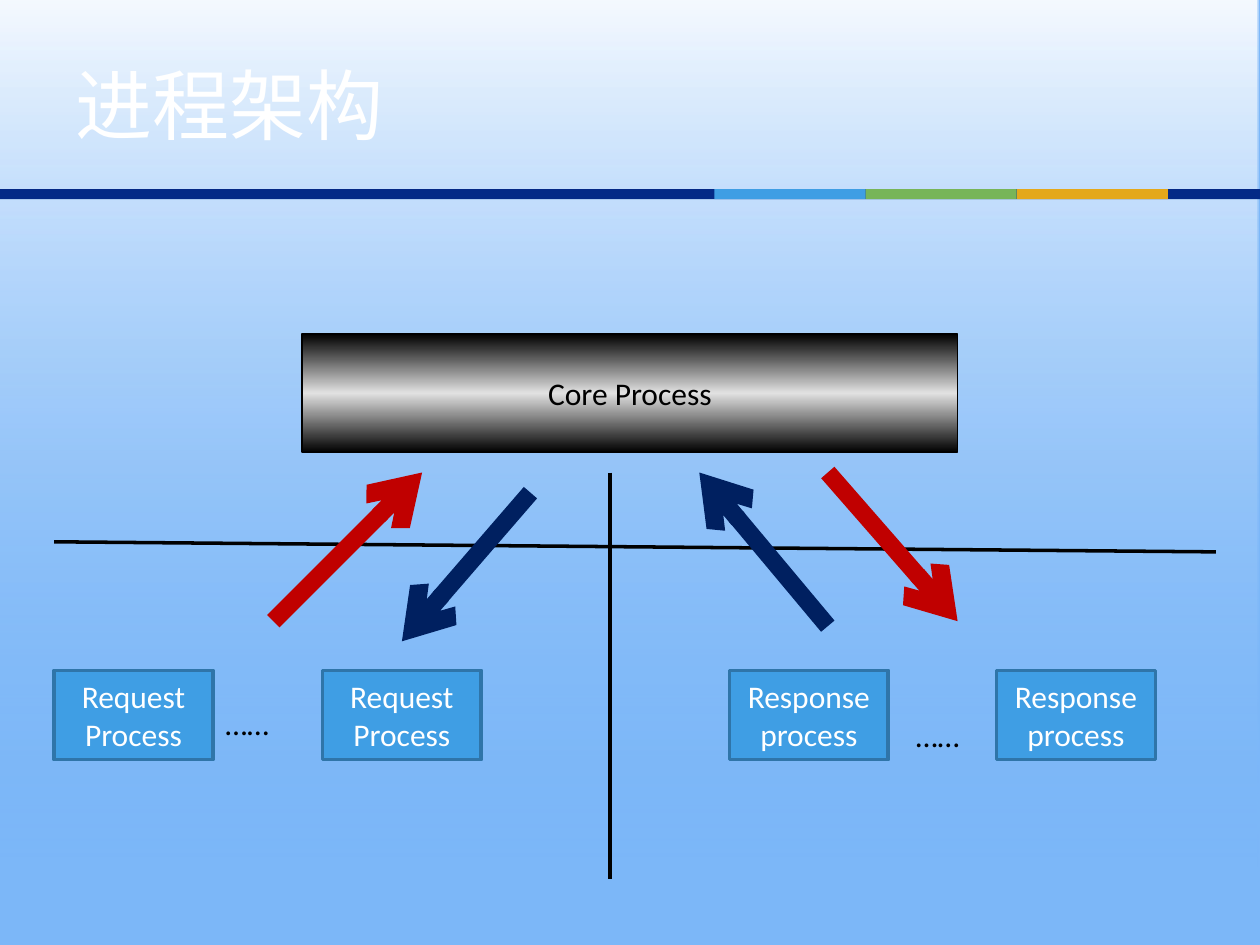
import pptx
import pptx.util
import pptx.dml.color
import pptx.enum.shapes
import pptx.enum.text
import pptx.oxml
import pptx.oxml.ns

Inches = pptx.util.Inches
Pt = pptx.util.Pt
PP_ALIGN = pptx.enum.text.PP_ALIGN
ANCHOR = pptx.enum.text.MSO_ANCHOR
COLORS = {
    "sky": "7CB7F8", "navy": "042986", "blue": "3F9EE4", "green": "77B559",
    "gold": "E4A81B", "edge": "2F75A9", "black": "000000", "silver": "E1E1E1",
    "white": "FFFFFF", "red": "C00000", "dark": "002060",
}


def rgb(name):
    return pptx.dml.color.RGBColor.from_string(COLORS[name])


def write(tf, text, color, size=18, align=PP_ALIGN.CENTER, anchor=ANCHOR.MIDDLE):
    tf.text = text
    tf.word_wrap = True
    tf.vertical_anchor = anchor
    for p in tf.paragraphs:
        p.alignment = align
        for r in p.runs:
            r.font.name = "Calibri"
            r.font.size = Pt(size)
            r.font.color.rgb = rgb(color)


def add_rect(s, box, fill, line=None, width=1):
    sp = s.shapes.add_shape(pptx.enum.shapes.MSO_SHAPE.RECTANGLE, *map(Inches, box))
    sp.shadow.inherit = False
    sp.fill.solid()
    sp.fill.fore_color.rgb = rgb(fill)
    if line:
        sp.line.color.rgb = rgb(line)
        sp.line.width = Pt(width)
    else:
        sp.line.fill.background()
    return sp


def set_gradient(sp, stops, angle):
    gs = "".join(
        f'<a:gs pos="{pos * 1000}"><a:srgbClr val="{COLORS[color]}">'
        f'<a:alpha val="{alpha * 1000}"/></a:srgbClr></a:gs>'
        for pos, color, alpha in stops)
    grad = pptx.oxml.parse_xml(
        f'<a:gradFill {pptx.oxml.ns.nsdecls("a")} rotWithShape="1"><a:gsLst>{gs}</a:gsLst>'
        f'<a:lin ang="{angle * 60000}" scaled="0"/></a:gradFill>')
    spPr = sp.element.spPr
    spPr.replace(spPr.find(pptx.oxml.ns.qn("a:solidFill")), grad)


def add_line(s, start, end, color, width, arrow=False):
    c = s.shapes.add_connector(
        pptx.enum.shapes.MSO_CONNECTOR.STRAIGHT, *map(Inches, start + end))
    c.line.color.rgb = rgb(color)
    c.line.width = Pt(width)
    ns = pptx.oxml.ns.nsdecls("a")
    if arrow:
        c.line._get_or_add_ln().append(pptx.oxml.parse_xml(f'<a:tailEnd {ns} type="arrow"/>'))
    c.element.spPr.append(pptx.oxml.parse_xml(f"<a:effectLst {ns}/>"))


def draw_backdrop(s, box):
    s.background.fill.solid()
    s.background.fill.fore_color.rgb = rgb("sky")
    glow = add_rect(s, box, "sky")
    set_gradient(glow, [(1, "sky", 0), (100, "white", 92)], 270)


def draw_stripe(s, box):
    x, y, w, h = box
    add_rect(s, box, "navy")
    for i, color in enumerate(("blue", "green", "gold")):
        add_rect(s, (x + 5.67 + i * 1.2, y, 1.2, h), color)


def draw_title(s, box, text):
    title = s.shapes.title
    title.left, title.top, title.width, title.height = map(Inches, box)
    write(title.text_frame, text, "white", 44, PP_ALIGN.LEFT)
    s.shapes._spTree.append(title.element)


def draw_core(s, box):
    core = add_rect(s, box, "black", "black")
    set_gradient(core, [(0, "black", 100), (50, "silver", 100), (100, "black", 100)], 90)
    write(core.text_frame, "Core Process", "black")


def draw_processes(s, box, text, dots_left, dots_top):
    x, y, w, h = box
    node_w = 1.26
    for left in (x, x + w - node_w):
        node = add_rect(s, (left, y, node_w, h), "blue", "edge", 2)
        write(node.text_frame, text, "white")
    dots = s.shapes.add_textbox(*map(Inches, (dots_left, dots_top, 0.86, 0.4)))
    write(dots.text_frame, "……", "black", align=PP_ALIGN.LEFT, anchor=ANCHOR.TOP)


def draw_flows(s, box):
    x, y, w, h = box
    add_line(s, (4.84, y), (4.84, y + h), "black", 2)
    add_line(s, (x, 4.3), (x + w, 4.38), "black", 2)
    for start, end, color in (
        ((2.17, 4.93), (3.35, y), "red"),
        ((6.57, y), (7.6, 4.93), "red"),
        ((6.57, 4.97), (5.55, y), "dark"),
        ((4.21, 3.91), (3.19, 5.09), "dark"),
    ):
        add_line(s, start, end, color, 10, arrow=True)


def main():
    prs = pptx.Presentation()
    prs.slide_width, prs.slide_height = Inches(10), Inches(7.5)
    s = prs.slides.add_slide(prs.slide_layouts[5])
    draw_backdrop(s, (-0.01, 0, 10, 6.88))
    draw_stripe(s, (0, 1.5, 10, 0.08))
    draw_title(s, (0.5, 0.2, 9, 1.25), "进程架构")
    draw_core(s, (2.4, 2.65, 5.2, 0.94))
    draw_processes(s, (0.43, 5.32, 3.39, 0.71), "Request Process", 1.69, 5.54)
    draw_processes(s, (5.79, 5.32, 3.38, 0.71), "Response\nprocess", 7.17, 5.63)
    draw_flows(s, (0.43, 3.75, 9.22, 3.23))
    prs.save("out.pptx")


if __name__ == "__main__":
    main()
